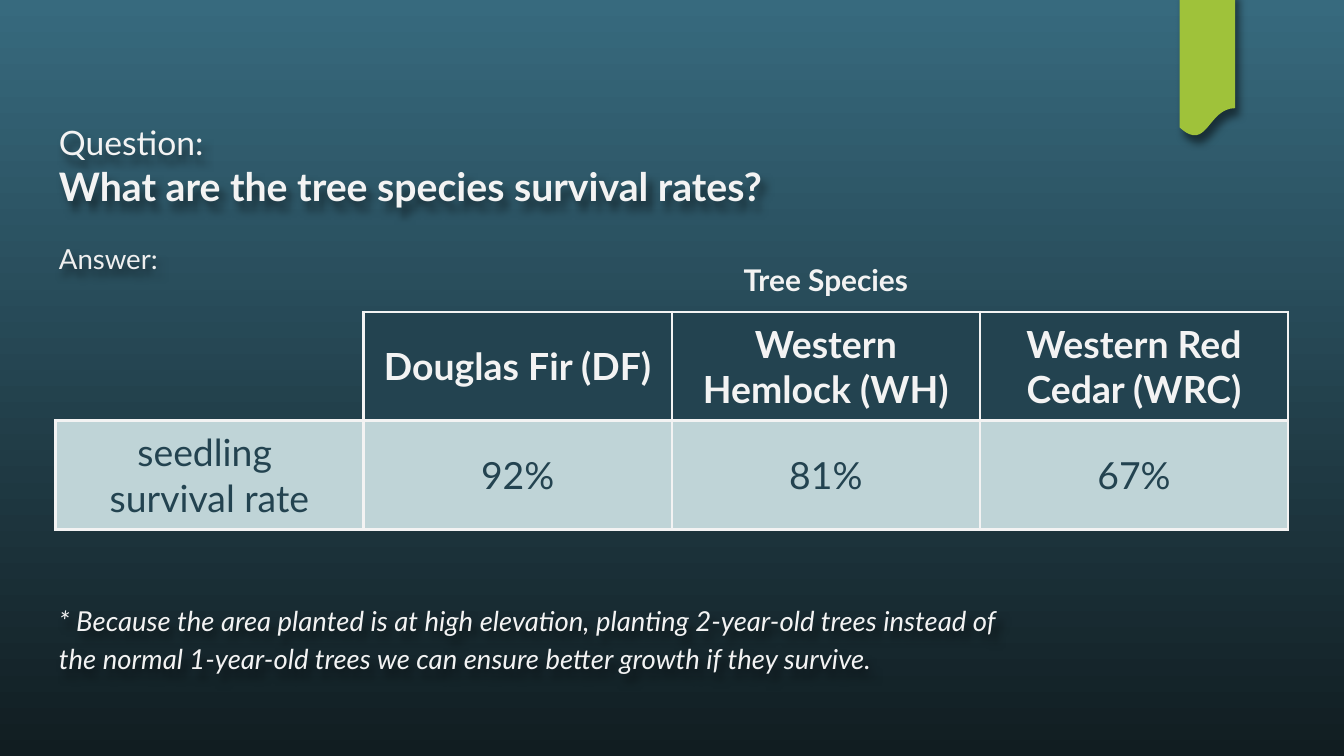
"""Build the tree species survival rate slide."""
from lxml import etree
from pptx import Presentation, util as u
from pptx.dml.color import RGBColor
from pptx.enum import shapes, text
from pptx.oxml import ns

Pt = u.Pt
COLORS = {
    "sky": "376A7E", "night": "111D21", "ribbon": "9FC23A", "light": "F3F3F3",
    "answer": "EFEFEF", "header": "234350", "value": "BFD4D7", "shadow": "000000",
}


def write(frame, content, size, color="light", bold=False, italic=False,
          align=None, spacing=None, new=False):
    paragraph = frame.add_paragraph() if new else frame.paragraphs[0]
    paragraph.text = content
    paragraph.alignment = align
    paragraph.line_spacing = spacing
    font = paragraph.font
    font.name, font.size, font.bold, font.italic = "Lato", Pt(size), bold, italic
    font.color.rgb = RGBColor.from_string(COLORS[color])


def cast_shadow(shape):
    effects = etree.SubElement(shape._element.spPr, ns.qn("a:effectLst"))
    outer = etree.SubElement(effects, ns.qn("a:outerShdw"), blurRad=str(Pt(4.5)),
                             dist=str(Pt(4.5)), dir="3660000", rotWithShape="0")
    tint = etree.SubElement(outer, ns.qn("a:srgbClr"), val=COLORS["shadow"])
    etree.SubElement(tint, ns.qn("a:alpha"), val="50000")


deck = Presentation()
deck.slide_width, deck.slide_height = Pt(720), Pt(405)
slide = deck.slides.add_slide(deck.slide_layouts[6])

backdrop = slide.background.fill
backdrop.gradient()
backdrop.gradient_angle = 270
for stop, position, shade in zip(backdrop.gradient_stops, (0, 1), ("sky", "night")):
    stop.position = position
    stop.color.rgb = RGBColor.from_string(COLORS[shade])

ribbon = slide.shapes.add_shape(shapes.MSO_SHAPE.FLOWCHART_DOCUMENT,
                                Pt(632), Pt(-5), Pt(29.7), Pt(78.5))
ribbon.fill.solid()
ribbon.fill.fore_color.rgb = RGBColor.from_string(COLORS["ribbon"])
ribbon.line.fill.background()
cast_shadow(ribbon)

frames = []
for top, height in ((35.3, 84.2), (119.5, 36), (314, 56)):
    box = slide.shapes.add_textbox(Pt(24.5), Pt(top), Pt(671), Pt(height))
    frame = box.text_frame
    frame.word_wrap = True
    frame.margin_left = frame.margin_right = Pt(7.2)
    frame.margin_top = frame.margin_bottom = Pt(7.2)
    cast_shadow(box)
    frames.append(frame)

question, answer, footnote = frames
question.vertical_anchor = text.MSO_ANCHOR.BOTTOM
write(question, "Question:", 18)
write(question, "What are the tree species survival rates?", 21, bold=True, new=True)
write(answer, "Answer:", 14.8, color="answer", spacing=1.15)
write(footnote, "* Because the area planted is at high elevation, planting 2-year-old trees "
      "instead of \vthe normal 1-year-old trees we can ensure better growth if they survive.",
      14.7, italic=True, spacing=1.15)

ROWS = [
    ["", "Tree Species", "", ""],
    ["", "Douglas Fir (DF)", "Western Hemlock (WH)", "Western Red Cedar (WRC)"],
    ["seedling \vsurvival rate", "92%", "81%", "67%"],
]
STYLES = [(16, "light", True, None), (20, "light", True, "header"), (20, "header", False, "value")]
HEIGHTS = (33.9, 58.3, 58.3)

survival = slide.shapes.add_table(3, 4, Pt(29.7), Pt(133.2), Pt(660.4), Pt(sum(HEIGHTS))).table
survival.first_row = survival.horz_banding = False
survival.cell(0, 1).merge(survival.cell(0, 3))
for column in survival.columns:
    column.width = Pt(165.1)

for r, (labels, (size, ink, bold, fill), height) in enumerate(zip(ROWS, STYLES, HEIGHTS)):
    survival.rows[r].height = Pt(height)
    for c, label in enumerate(labels):
        cell = survival.cell(r, c)
        cell.vertical_anchor = text.MSO_ANCHOR.MIDDLE
        cell.margin_left = cell.margin_right = Pt(5)
        cell.margin_top = cell.margin_bottom = Pt(5)
        write(cell.text_frame, label, size, color=ink, bold=bold,
              align=text.PP_ALIGN.CENTER)
        if fill and label:
            cell.fill.solid()
            cell.fill.fore_color.rgb = RGBColor.from_string(COLORS[fill])
            ruled = "LRTB"
        else:
            cell.fill.background()
            ruled = "RB" if r else "B" if c else ""
        properties = cell._tc.get_or_add_tcPr()
        for index, side in enumerate("LRTB"):
            border = etree.Element(ns.qn(f"a:ln{side}"), w=str(Pt(1.5)))
            properties.insert(index, border)
            if side in ruled:
                paint = etree.SubElement(border, ns.qn("a:solidFill"))
                etree.SubElement(paint, ns.qn("a:srgbClr"), val=COLORS["light"])
            else:
                etree.SubElement(border, ns.qn("a:noFill"))

deck.save("out.pptx")
